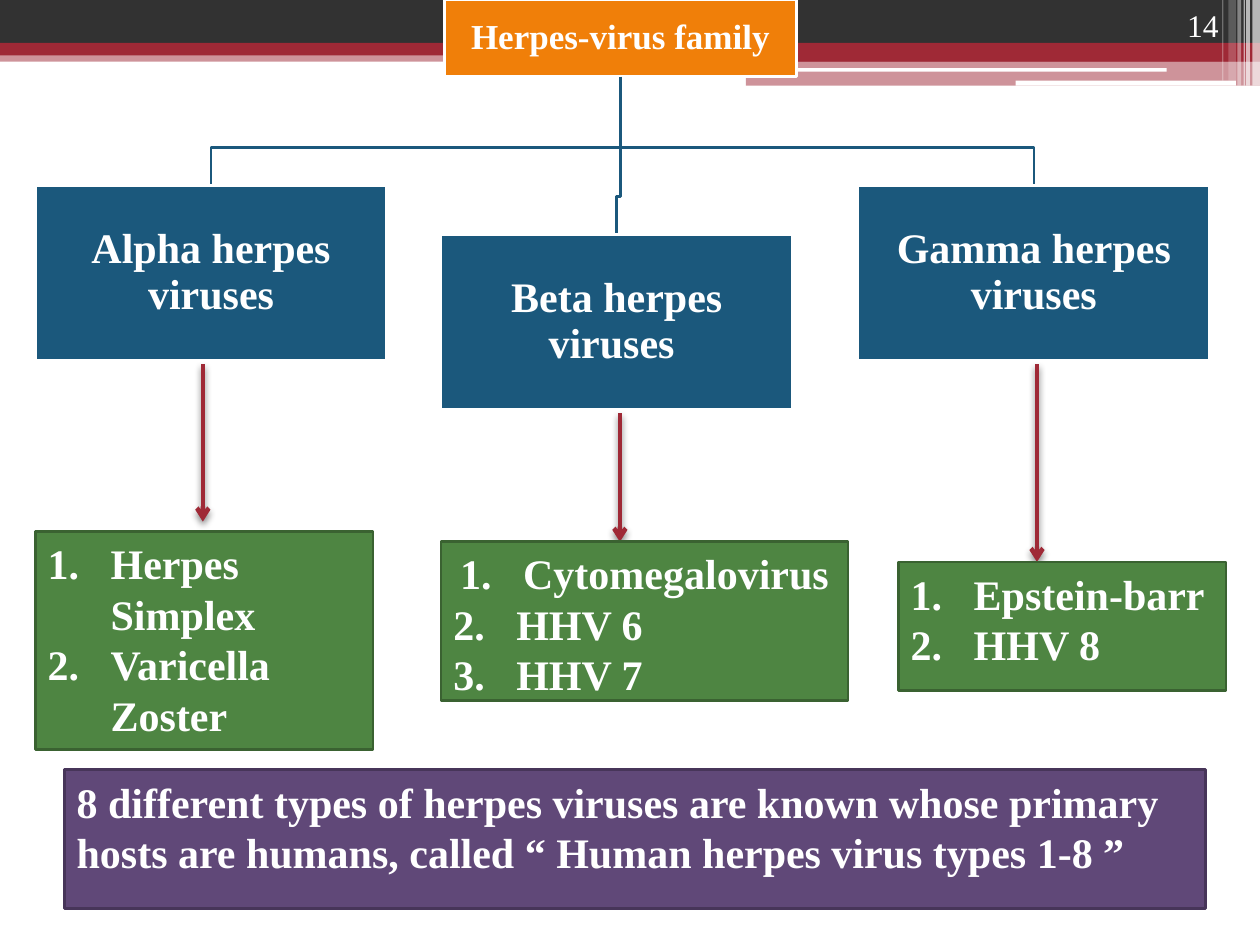
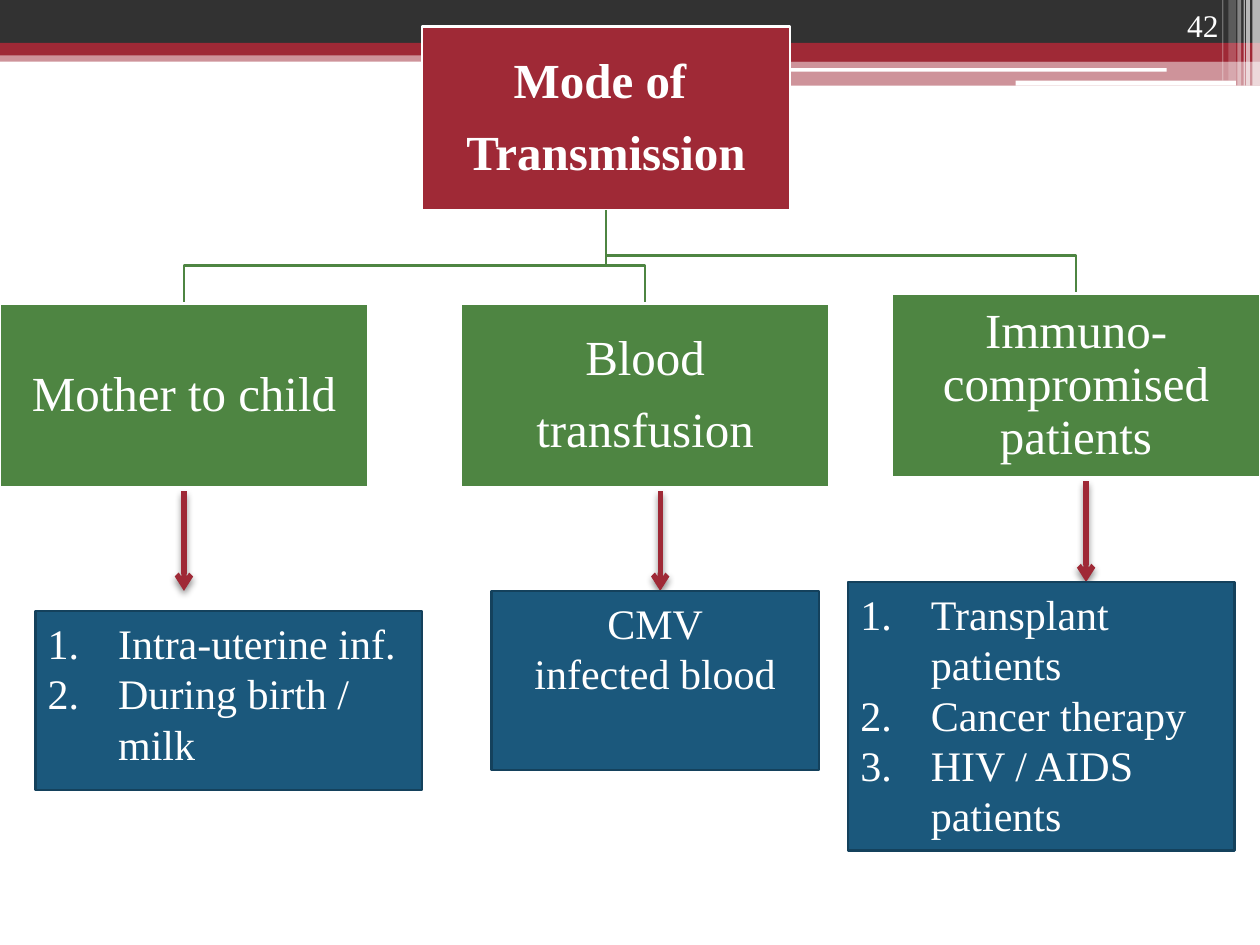
from lxml.etree import SubElement
from pptx import Presentation
from pptx.dml.color import RGBColor
from pptx.enum.shapes import MSO_CONNECTOR, MSO_SHAPE
from pptx.enum.text import MSO_ANCHOR, MSO_AUTO_SIZE, PP_ALIGN
from pptx.oxml.ns import qn
from pptx.util import Inches, Pt

FONT = "Times New Roman"
WHITE, DARK, RED = "FFFFFF", "323232", "9F2936"
BLUE, GREEN, ORANGE, PLUM = "1B587C", "4E8542", "F07F09", "604878"
EDGE = {GREEN: "3A6231", BLUE: "14415C", PLUM: "473559"}
LEFT, MID, RIGHT = PP_ALIGN.LEFT, PP_ALIGN.CENTER, PP_ALIGN.RIGHT

BANDS = [
    (0, 0.4, 10, 0.09, RED, 50),
    (0, 0, 10, 0.34, DARK, 100),
    (0, 0.34, 10, 0.1, RED, 100),
    (5.92, 0.39, 4.08, 0.1, RED, 100),
    (5.92, 0.48, 4.08, 0.2, RED, 50),
    (5.91, 0.54, 3.35, 0.03, WHITE, 100),
    (8.06, 0.64, 1.75, 0.04, WHITE, 100),
    (9.94, 0, 0.06, 0.68, WHITE, 65),
    (9.89, 0, 0.03, 0.68, WHITE, 65),
    (9.87, 0, 0.01, 0.68, WHITE, 60),
    (9.82, 0, 0.03, 0.68, WHITE, 40),
    (9.75, 0, 0.06, 0.64, WHITE, 20),
    (9.7, 0, 0.01, 0.64, WHITE, 30),
]

FAMILY = {
    "page": "14",
    "title": ["Herpes-virus family"],
    "top": (3.53, 0, 2.79, 0.61), "top_fill": ORANGE, "top_size": 20,
    "node": (2.79, 1.39), "node_fill": BLUE, "node_size": 24, "bold": True,
    "nodes": [
        (0.28, 1.47, ["Alpha herpes viruses"]),
        (3.5, 1.86, ["Beta herpes viruses "]),
        (6.81, 1.47, ["Gamma herpes viruses"]),
    ],
    "arrows": [(1.61, 4.14), (4.92, 4.3), (8.23, 4.46)], "weight": 2.5,
    "list_fill": GREEN, "indent": 0.5,
    "lists": [
        ((0.28, 4.22, 2.68, 1.73), True, [LEFT, LEFT],
         ["Herpes Simplex", "Varicella Zoster"]),
        ((3.5, 4.3, 3.23, 1.26), True, [MID, LEFT, LEFT],
         ["Cytomegalovirus", "HHV 6", "HHV 7"]),
        ((7.13, 4.46, 2.6, 1.02), True, [LEFT, LEFT],
         ["Epstein-barr", "HHV 8"]),
    ],
    "note": ((0.51, 6.11, 9.06, 1.1),
             ["8 different types of herpes viruses are known whose primary "
              "hosts are humans, called “ Human herpes virus types 1-8 ”"]),
}

SPREAD = {
    "page": "42",
    "title": ["Mode of ", "Transmission"],
    "top": (3.35, 0.21, 2.92, 1.46), "top_fill": RED, "top_size": 28,
    "node": (2.92, 1.46), "node_fill": GREEN, "node_size": 28, "bold": False,
    "nodes": [
        (0, 2.41, ["Mother to child"]),
        (3.66, 2.41, ["Blood", "transfusion"]),
        (7.08, 2.33, ["Immuno-compromised patients"]),
    ],
    "arrows": [(1.46, 4.69), (5.24, 4.69), (8.62, 4.62)], "weight": 3,
    "list_fill": BLUE, "indent": 0.56,
    "lists": [
        ((0.28, 4.85, 3.07, 1.42), True, [LEFT, LEFT],
         ["Intra-uterine inf.", "During birth / milk"]),
        ((3.9, 4.69, 2.6, 1.42), False, [MID, MID],
         ["CMV", "infected blood"]),
        ((6.73, 4.62, 3.07, 2.13), True, [LEFT, LEFT, LEFT],
         ["Transplant patients", "Cancer therapy", "HIV / AIDS patients"]),
    ],
}


def color(code):
    return RGBColor.from_string(code)


def place(shape, rect):
    shape.left, shape.top, shape.width, shape.height = map(Inches, rect)


def paint(shape, fill, line=None, alpha=100):
    shape.fill.solid()
    shape.fill.fore_color.rgb = color(fill)
    if alpha < 100:
        tone = shape.fill._xPr.find(qn("a:solidFill"))[0]
        SubElement(tone, qn("a:alpha"), val=str(alpha * 1000))
    if line:
        shape.line.color.rgb = color(line)
        shape.line.width = Pt(1.5)
    else:
        shape.line.fill.background()


def rect_on(slide, rect, kind=MSO_SHAPE.RECTANGLE):
    shape = slide.shapes.add_shape(kind, *map(Inches, rect))
    shape.shadow.inherit = False
    return shape


def write(shape, lines, size, bold, aligns, anchor=MSO_ANCHOR.TOP,
          inset=None, tight=False, indent=None):
    frame = shape.text_frame
    frame.word_wrap = True
    frame.auto_size = MSO_AUTO_SIZE.NONE
    frame.vertical_anchor = anchor
    if inset is not None:
        frame.margin_left = frame.margin_right = Inches(inset)
        frame.margin_top = frame.margin_bottom = Inches(inset)
    frame.text = "\n".join(lines)
    for i, (para, align) in enumerate(zip(frame.paragraphs, aligns)):
        para.alignment = align
        if tight:
            para.line_spacing = 0.9
            if i:
                para.space_before = Pt(11)
        if indent:
            props = para._p.get_or_add_pPr()
            props.set("marL", str(Inches(indent)))
            props.set("indent", str(-Inches(indent)))
            SubElement(props, qn("a:buFont"), typeface="+mj-lt")
            SubElement(props, qn("a:buAutoNum"), type="arabicPeriod")
        font = para.font
        font.name, font.size, font.bold = FONT, Pt(size), bold
        font.color.rgb = color(WHITE)


def node(shape, lines, fill, size, bold, inset=0.02):
    paint(shape, fill, WHITE)
    write(shape, lines, size, bold, [MID] * len(lines), MSO_ANCHOR.MIDDLE,
          inset, tight=True)


def branch(slide, start, end, code):
    (x, y), (to_x, to_y) = start, end
    bend = to_y - 0.3
    pen = slide.shapes.build_freeform(Inches(x), Inches(y))
    pen.add_line_segments(
        [(Inches(a), Inches(b)) for a, b in
         ((x, bend), (to_x, bend), (to_x, to_y))], close=False)
    path = pen.convert_to_shape()
    path.shadow.inherit = False
    path.fill.background()
    path.line.color.rgb = color(code)
    path.line.width = Pt(1.5)


def arrow(slide, x, top, end, weight):
    line = slide.shapes.add_connector(
        MSO_CONNECTOR.STRAIGHT, *map(Inches, (x, top, x, end)))
    line.line.color.rgb = color(RED)
    line.line.width = Pt(weight)
    SubElement(line.line._get_or_add_ln(), qn("a:tailEnd"), type="arrow")
    effect = SubElement(line._element.spPr, qn("a:effectLst"))
    shade = SubElement(effect, qn("a:outerShdw"), blurRad=str(Pt(4)),
                       dist=str(Pt(2)), dir="5400000", rotWithShape="0")
    black = SubElement(shade, qn("a:srgbClr"), val="000000")
    SubElement(black, qn("a:alpha"), val="45000")


def share(slide):
    tree = slide.slide_layout.shapes._spTree
    for *rect, fill, alpha in BANDS:
        band = rect_on(slide, rect)
        paint(band, fill, alpha=alpha)
        tree.append(band._element)


def chart(slide, data):
    x, y, width, height = data["top"]
    wide, high = data["node"]
    bold = data["bold"]
    for left, top, _ in data["nodes"]:
        branch(slide, (x + width / 2, y + height), (left + wide / 2, top),
               data["node_fill"])
    title = slide.shapes.title
    place(title, data["top"])
    node(title, data["title"], data["top_fill"], data["top_size"], True, 0.01)
    for (left, top, lines), (mid, end) in zip(data["nodes"], data["arrows"]):
        box = rect_on(slide, (left, top, wide, high))
        node(box, lines, data["node_fill"], data["node_size"], bold)
        arrow(slide, mid, top + high + 0.03, end, data["weight"])
    fill = data["list_fill"]
    for rect, count, aligns, lines in data["lists"]:
        box = rect_on(slide, rect)
        paint(box, fill, EDGE[fill])
        write(box, lines, 24, bold, aligns,
              indent=data["indent"] if count else None)
    if "note" in data:
        rect, lines = data["note"]
        box = rect_on(slide, rect)
        paint(box, PLUM, EDGE[PLUM])
        write(box, lines, 24, True, [LEFT])
    page = slide.shapes.add_textbox(*map(Inches, (8.94, 0, 0.83, 0.4)))
    write(page, [data["page"]], 18, False, [RIGHT], MSO_ANCHOR.BOTTOM)


def main():
    deck = Presentation()
    deck.slide_width, deck.slide_height = Inches(10), Inches(7.5)
    layout = deck.slide_layouts[5]
    for i, data in enumerate((FAMILY, SPREAD)):
        slide = deck.slides.add_slide(layout)
        if i == 0:
            share(slide)
        chart(slide, data)
    deck.save("out.pptx")


if __name__ == "__main__":
    main()
